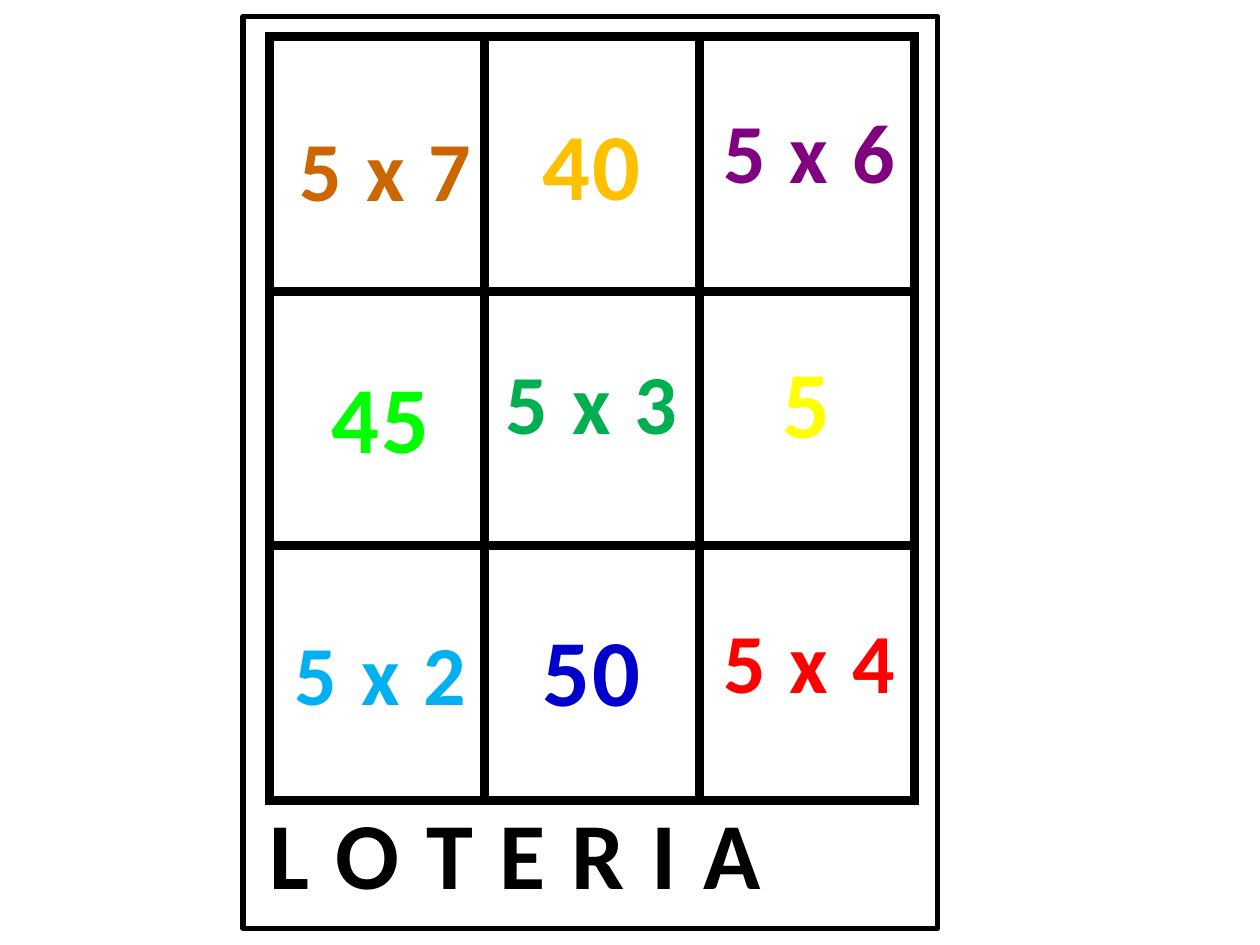
from lxml import etree
from pptx import Presentation
from pptx.dml.color import RGBColor
from pptx.enum.shapes import MSO_SHAPE
from pptx.enum.text import MSO_ANCHOR, MSO_AUTO_SIZE, PP_ALIGN
from pptx.oxml.ns import qn
from pptx.util import Cm, Pt

RECTANGLE = MSO_SHAPE.RECTANGLE
TOP = MSO_ANCHOR.TOP
FIT_SHAPE = MSO_AUTO_SIZE.SHAPE_TO_FIT_TEXT
CENTER = PP_ALIGN.CENTER

BLACK = RGBColor(0x00, 0x00, 0x00)
BROWN = RGBColor(0xCC, 0x66, 0x00)
ORANGE = RGBColor(0xFF, 0xC0, 0x00)
PURPLE = RGBColor(0x80, 0x00, 0x80)
LIME = RGBColor(0x00, 0xFF, 0x00)
GREEN = RGBColor(0x00, 0xB0, 0x50)
YELLOW = RGBColor(0xFF, 0xFF, 0x00)
SKY = RGBColor(0x00, 0xB0, 0xF0)
BLUE = RGBColor(0x00, 0x00, 0xCC)
RED = RGBColor(0xFF, 0x00, 0x00)

FONT = "Calibri"
LARGE, SMALL = 54, 48
TEXT_HEIGHT = {LARGE: 2.57, SMALL: 2.31}
SIZE = 3

# Text, colour, point size, box width, shift from the cell centre (cm)
CARD = [
    [("5 x 7", BROWN, SMALL, 4.06, 0.18, 0.09),
     ("40", ORANGE, LARGE, 2.57, 0, 0),
     ("5 x 6", PURPLE, SMALL, 4.06, 0.05, -0.27)],
    [("45", LIME, LARGE, 2.57, 0.08, -0.04),
     ("5 x 3", GREEN, SMALL, 4.06, 0, -0.34),
     ("5", YELLOW, LARGE, 1.55, 0, -0.34)],
    [("5 x 2", SKY, SMALL, 4.06, 0.08, 0),
     ("50", BLUE, LARGE, 2.57, 0, -0.06),
     ("5 x 4", RED, SMALL, 4.06, 0.05, -0.24)],
]


def add_label(slide, text, color, size, left, top, width):
    """Bold, letter-spaced text in a box that fits it."""
    box = slide.shapes.add_textbox(Cm(left), Cm(top), Cm(width), Cm(TEXT_HEIGHT[size]))
    frame = box.text_frame
    frame.word_wrap = False
    frame.auto_size = FIT_SHAPE
    frame.vertical_anchor = TOP
    paragraph = frame.paragraphs[0]
    paragraph.alignment = CENTER
    run = paragraph.add_run()
    run.text = text
    font = run.font
    font.name = FONT
    font.size = Pt(size)
    font.bold = True
    font.color.rgb = color
    run.font._element.set("spc", "150")


def set_borders(cell, color, width):
    properties = cell._tc.get_or_add_tcPr()
    for side in ("a:lnL", "a:lnR", "a:lnT", "a:lnB"):
        line = etree.SubElement(properties, qn(side), w=str(Pt(width)))
        fill = etree.SubElement(line, qn("a:solidFill"))
        etree.SubElement(fill, qn("a:srgbClr"), val=str(color))


def add_grid(slide, left, top, width, height):
    """Empty ruled table with one label over each cell."""
    table = slide.shapes.add_table(
        SIZE, SIZE, Cm(left), Cm(top), Cm(width), Cm(height)).table
    table.first_row = False
    table.horz_banding = False
    for cell in table.iter_cells():
        set_borders(cell, BLACK, 6)
        cell.fill.background()

    cell_width, cell_height = width / SIZE, height / SIZE
    for row, labels in enumerate(CARD):
        for column, (text, color, size, label_width, dx, dy) in enumerate(labels):
            center_x = left + (column + 0.5) * cell_width + dx
            center_y = top + (row + 0.5) * cell_height + dy
            add_label(slide, text, color, size, center_x - label_width / 2,
                      center_y - TEXT_HEIGHT[size] / 2, label_width)


def add_card(slide, left, top, width, height):
    """Loteria card: grid, outer frame and title."""
    add_grid(slide, left + 0.53, top + 0.41, 13, 15.39)

    frame = slide.shapes.add_shape(RECTANGLE, Cm(left), Cm(top), Cm(width), Cm(height))
    frame.shadow.inherit = False
    frame.fill.background()
    frame.line.color.rgb = BLACK
    frame.line.width = Pt(3)
    etree.SubElement(frame.line._get_or_add_ln(), qn("a:round"))

    add_label(slide, "L O T E R I A", BLACK, LARGE, left + 0.2, top + 15.57, 10.59)


def main():
    presentation = Presentation()
    presentation.slide_width = Cm(25.4)
    presentation.slide_height = Cm(19.05)
    slide = presentation.slides.add_slide(presentation.slide_layouts[6])
    add_card(slide, 4.9, 0.33, 14, 18.39)
    presentation.save("out.pptx")


if __name__ == "__main__":
    main()
